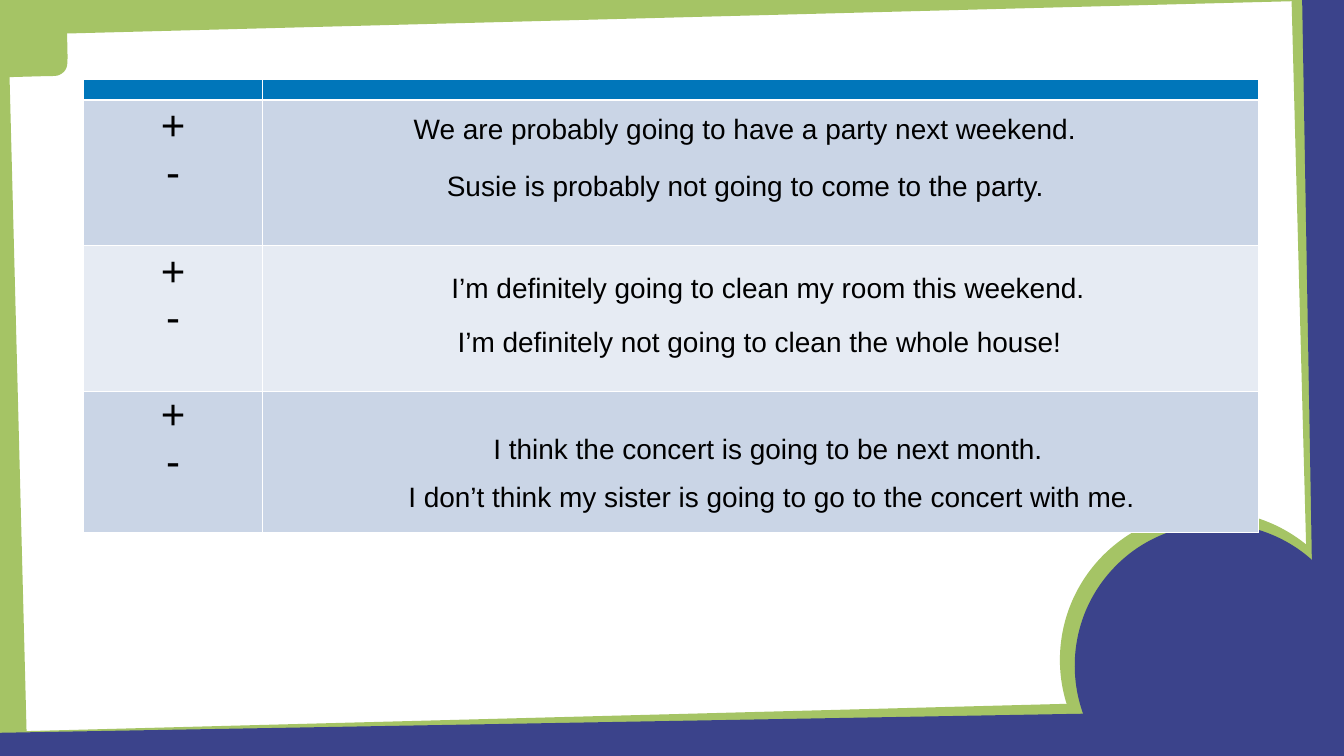
from lxml.etree import SubElement
from pptx import Presentation
from pptx.dml.color import RGBColor
from pptx.enum.text import MSO_ANCHOR, PP_ALIGN
from pptx.oxml.ns import qn
from pptx.util import Inches, Pt

GREEN = RGBColor(0xA5, 0xC4, 0x65)
NAVY = RGBColor(0x3B, 0x43, 0x8B)
BLUE = RGBColor(0x00, 0x76, 0xBA)
BAND_DARK = RGBColor(0xCA, 0xD5, 0xE6)
BAND_LIGHT = RGBColor(0xE6, 0xEB, 0xF3)
WHITE = RGBColor(0xFF, 0xFF, 0xFF)
BLACK = RGBColor(0, 0, 0)
FONT = "Arial"
W, H = 26.67, 15

GREEN_CIRCLE = [(23.98, 10.14), (23.21, 10.15, 22.45, 10.45, 21.87, 11.04),
                (20.79, 12.15, 20.76, 13.88, 21.75, 15), (W, 14.95), (W, 11.67),
                (26.51, 11.42, 26.33, 11.18, 26.11, 10.97),
                (25.51, 10.4, 24.74, 10.12, 23.98, 10.14)]
NAVY_CIRCLE = [(24.1, 10.39), (23.38, 10.41, 22.66, 10.69, 22.12, 11.25),
               (21.11, 12.29, 21.07, 13.91, 21.97, 15), (26.39, 14.92),
               (26.51, 14.76, 26.61, 14.59, W, 14.42), (W, 11.92),
               (26.52, 11.66, 26.34, 11.41, 26.11, 11.18),
               (25.55, 10.64, 24.82, 10.38, 24.1, 10.39)]
CORNER_TAB = [(0, 0), (0, 1.52), (0.05, 1.53, 0.12, 1.53, 0.22, 1.53), (0.93, 1.51),
              (1.05, 1.51, 1.13, 1.51, 1.17, 1.49), (1.24, 1.46, 1.3, 1.41, 1.32, 1.34),
              (1.34, 1.29, 1.34, 1.21, 1.34, 1.09), (1.32, 0.14),
              (1.32, 0.08, 1.32, 0.04, 1.32, 0)]
FRAME = [
    (GREEN, GREEN_CIRCLE),
    (GREEN, [(25.63, 0), (26.03, H), (26.47, H), (26.07, 0)]),
    (GREEN, CORNER_TAB),
    (GREEN, [(0, 0), (0, 0.7), (26.56, 0)]),
    (GREEN, [(W, 13.82), (0, 14.52), (0, 14.87), (W, 14.18)]),
    (GREEN, [(0, 0), (0, H), (0.54, H), (0.15, 0)]),
    (NAVY, [(25.84, 0), (26.1, H), (W, H), (W, 0)]),
    (NAVY, [(W, 14.07), (0, 14.54), (0, H), (W, H)]),
    (NAVY, NAVY_CIRCLE),
]
SENTENCES = [
    (3.37, 0.58, "We are probably going to have a party next weekend."),
    (3.38, 1.71, "Susie is probably not going to come to the party."),
    (3.83, 3.74, "I’m definitely going to clean my room this weekend."),
    (3.66, 4.81, "I’m definitely not going to clean the whole house!"),
    (3.83, 6.93, "I think the concert is going to be next month."),
    (3.9, 7.88, "I don’t think my sister is going to go to the concert with me."),
]


def flatten(path, steps=20):
    """Return points along a path whose six-number items are Bézier curves."""
    points = [path[0]]
    for item in path[1:]:
        if len(item) == 2:
            points.append(item)
            continue
        (x0, y0), (x1, y1, x2, y2, x3, y3) = points[-1], item
        for i in range(1, steps + 1):
            t = i / steps
            a, b, c, d = (1 - t) ** 3, 3 * t * (1 - t) ** 2, 3 * t * t * (1 - t), t ** 3
            points.append((a * x0 + b * x1 + c * x2 + d * x3,
                           a * y0 + b * y1 + c * y2 + d * y3))
    return points


def add_outline(s, left, top, path, color):
    """Draw a filled outline, sized by its flattened points, with true curves."""
    points = [(Inches(left + x), Inches(top + y)) for x, y in flatten(path)]
    builder = s.shapes.build_freeform(*points[0])
    builder.add_line_segments(points[1:], close=True)
    sp = builder.convert_to_shape()
    outline = sp._element.spPr.find(".//" + qn("a:path"))
    for step in list(outline):
        outline.remove(step)
    for i, item in enumerate(path):
        tag = "a:moveTo" if i == 0 else "a:lnTo" if len(item) == 2 else "a:cubicBezTo"
        step = SubElement(outline, qn(tag))
        for x, y in zip(item[::2], item[1::2]):
            SubElement(step, qn("a:pt"), x=str(Inches(left + x) - sp.left),
                       y=str(Inches(top + y) - sp.top))
    SubElement(outline, qn("a:close"))
    sp.shadow.inherit = False
    sp.fill.solid()
    sp.fill.fore_color.rgb = color
    sp.line.fill.background()


def add_frame(s, left, top):
    """Draw the slanted bands and the corner circle around the slide."""
    for color, path in FRAME:
        add_outline(s, left, top, path, color)


def style_cell(cell, color, bottom):
    """Give a cell white borders and a plain fill."""
    tcPr = cell._tc.get_or_add_tcPr()
    for side, width in (("L", 1), ("R", 1), ("T", 1), ("B", bottom)):
        ln = SubElement(tcPr, qn(f"a:ln{side}"), w=str(Pt(width)))
        fill = SubElement(ln, qn("a:solidFill"))
        SubElement(fill, qn("a:srgbClr"), val=str(WHITE))
    cell.fill.solid()
    cell.fill.fore_color.rgb = color


def add_sign_table(s, left, top):
    """Draw the table with plus and minus signs in its first column."""
    widths, heights = [3.55, 19.76], [0.41, 2.89, 2.89, 2.8]
    fills = [BLUE, BAND_DARK, BAND_LIGHT, BAND_DARK]
    table = s.shapes.add_table(4, 2, Inches(left), Inches(top),
                               Inches(sum(widths)), Inches(sum(heights))).table
    for column, width in zip(table.columns, widths):
        column.width = Inches(width)
    for i, (row, height, color) in enumerate(zip(table.rows, heights, fills)):
        row.height = Inches(height)
        for cell in row.cells:
            style_cell(cell, color, 3 if i == 0 else 1)
        if i == 0:
            continue
        cell = row.cells[0]
        if i == 3:
            cell.margin_left = cell.margin_right = Inches(0.05)
            cell.margin_top = cell.margin_bottom = 0
        cell.text_frame.text = "+\n-"
        for p in cell.text_frame.paragraphs:
            set_paragraph(p, 60)


def set_paragraph(p, size):
    """Centre a paragraph and set its font."""
    p.alignment = PP_ALIGN.CENTER
    p.font.name = FONT
    p.font.size = Pt(size)
    p.font.color.rgb = BLACK


def add_sentences(s, left, top):
    """Place the example sentences over the table's wide column."""
    for x, y, text in SENTENCES:
        tf = s.shapes.add_textbox(Inches(left + x), Inches(top + y),
                                  Inches(19.49), Inches(0.79)).text_frame
        tf.word_wrap = True
        tf.vertical_anchor = MSO_ANCHOR.MIDDLE
        tf.margin_left = tf.margin_right = Inches(0.06)
        tf.margin_top = tf.margin_bottom = Inches(0.06)
        tf.text = text
        set_paragraph(tf.paragraphs[0], 40)


def main():
    """Build the slide and save it."""
    prs = Presentation()
    prs.slide_width, prs.slide_height = Inches(W), Inches(H)
    s = prs.slides.add_slide(prs.slide_layouts[6])
    add_frame(s, 0, 0)
    add_sign_table(s, 1.66, 1.57)
    add_sentences(s, 1.66, 1.57)
    prs.save("out.pptx")


if __name__ == "__main__":
    main()
